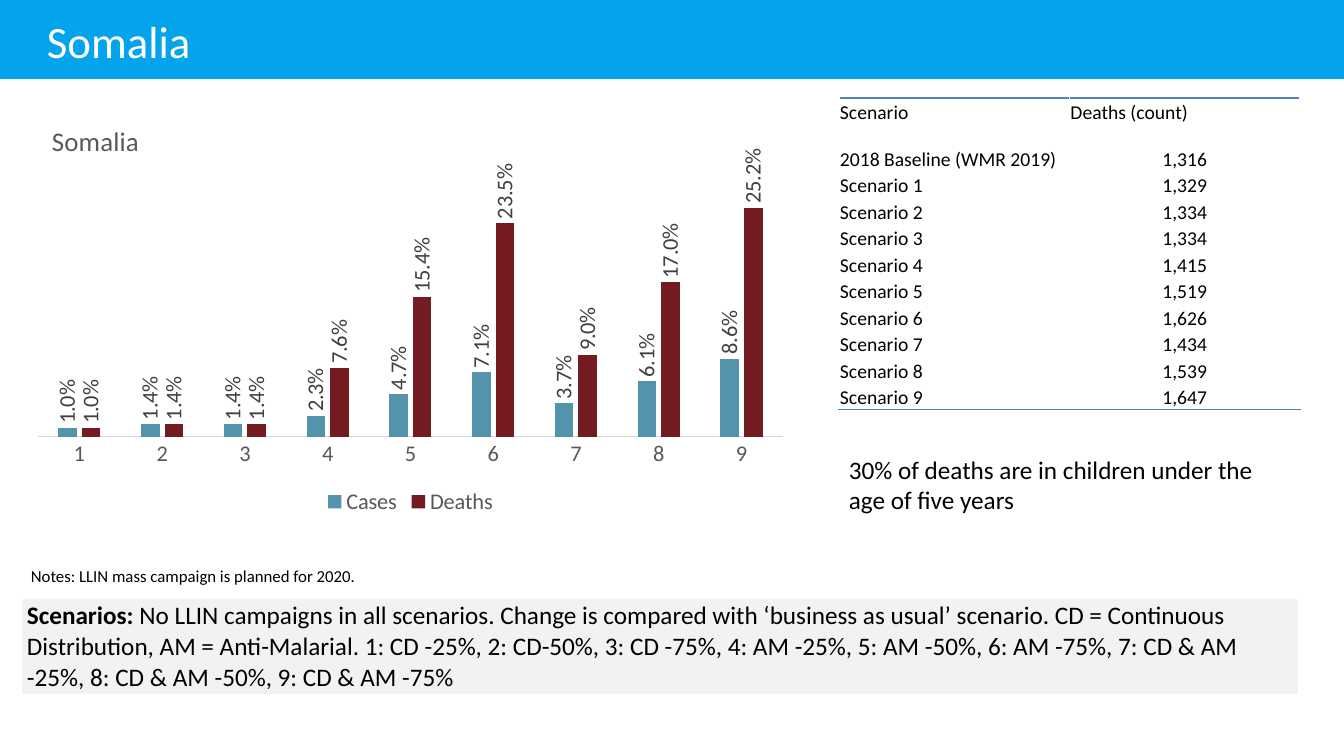
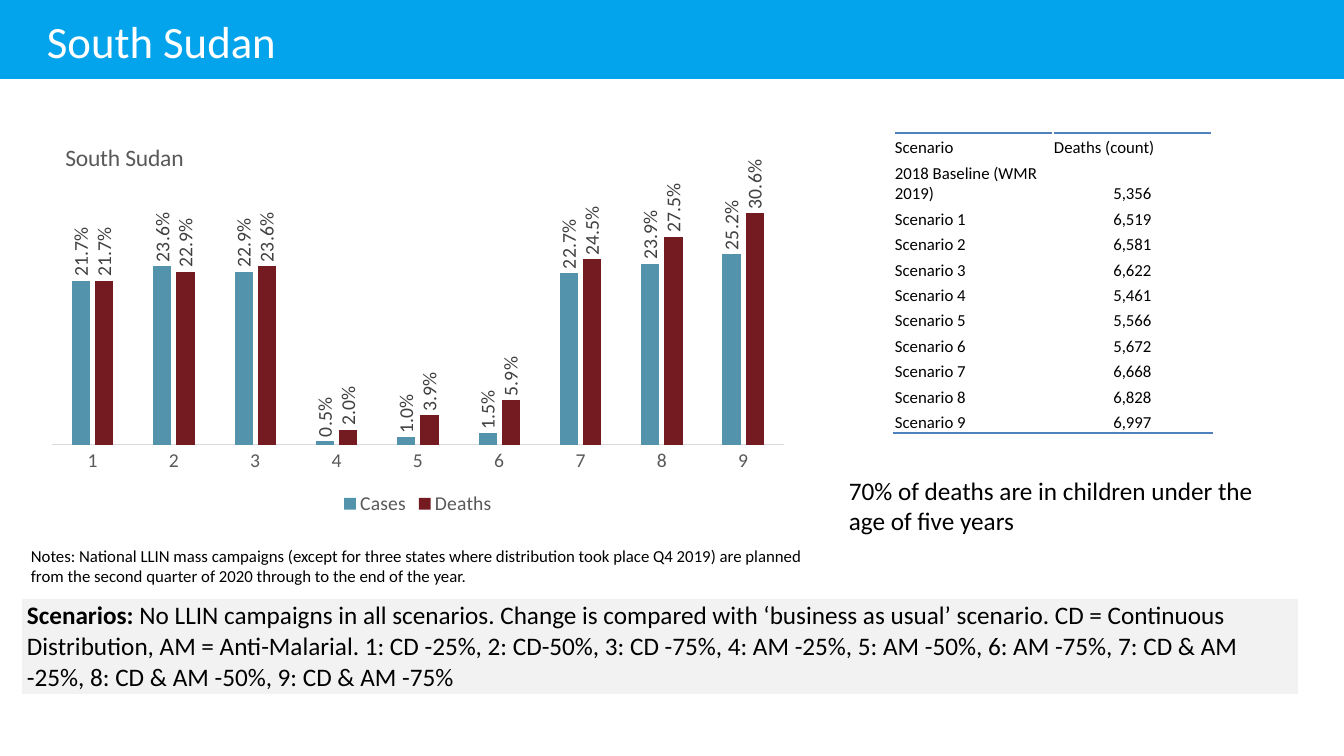
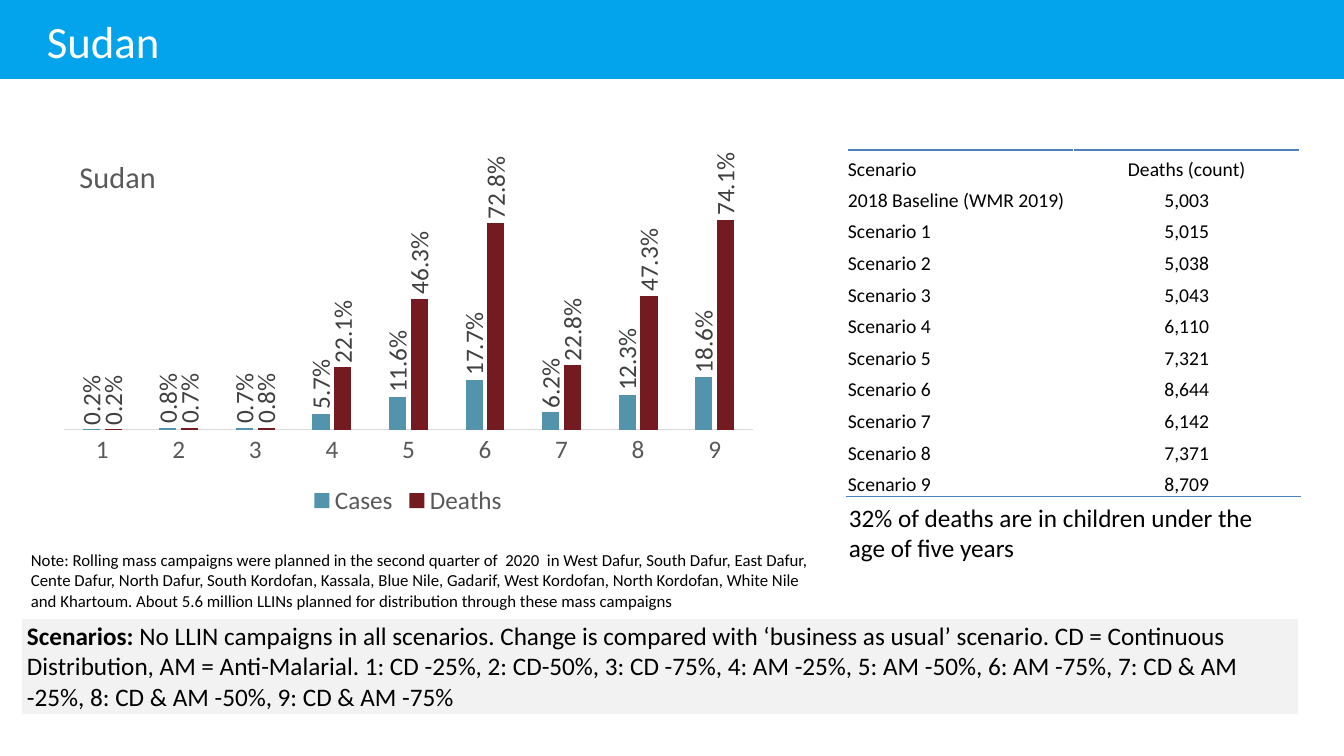
"""Build three country slides on malaria scenarios, each with a chart and a table."""
from pptx import Presentation
from pptx.chart.data import CategoryChartData
from pptx.dml.color import RGBColor
from pptx.enum.chart import XL_CHART_TYPE as ChartType
from pptx.enum.chart import XL_LABEL_POSITION as LabelPosition
from pptx.enum.chart import XL_LEGEND_POSITION as LegendPosition
from pptx.enum.chart import XL_TICK_MARK as TickMark
from pptx.enum.shapes import MSO_SHAPE as Shape
from pptx.enum.text import MSO_ANCHOR as Anchor
from pptx.enum.text import PP_ALIGN as Align
from pptx.oxml import parse_xml
from pptx.oxml.ns import nsdecls, qn
from pptx.util import Pt

PX = 914400 / 100.8
FONT = "Calibri"
BLACK, WHITE, BAND, PANEL = "000000", "FFFFFF", "04A4EC", "F2F2F2"
RULE, GREY, LABEL, AXIS = "4F81BD", "595959", "404040", "D9D9D9"
SERIES_COLORS = {"Cases": "5393AB", "Deaths": "741B22"}

SCENARIOS = (
    "No LLIN campaigns in all scenarios. Change is compared with ‘business as usual’ scenario. "
    "CD = Continuous Distribution, AM = Anti-Malarial. 1: CD -25%, 2: CD-50%, 3: CD -75%, "
    "4: AM -25%, 5: AM -50%, 6: AM -75%, 7: CD & AM -25%, 8: CD & AM -50%, 9: CD & AM -75%"
)
ROW_NAMES = ["2018 Baseline (WMR 2019)"] + [f"Scenario {number}" for number in range(1, 10)]

COUNTRIES = [
    dict(
        name="Somalia",
        note="Notes: LLIN mass campaign is planned for 2020.",
        note_box=(21, 561, 763, 30),
        share="30%", share_top=449, panel_top=598,
        table_box=(839, 98, 461, 312), baseline_height=47, table_size=14, header_align=Align.LEFT,
        counts="1,316 1,329 1,334 1,334 1,415 1,519 1,626 1,434 1,539 1,647",
        chart_box=(22, 92, 777, 428), chart_size=16, title_at=(47, 117),
        plot_box=(38, 164, 745, 273), top_value=0.3,
        Cases=[1.0, 1.4, 1.4, 2.3, 4.7, 7.1, 3.7, 6.1, 8.6],
        Deaths=[1.0, 1.4, 1.4, 7.6, 15.4, 23.5, 9.0, 17.0, 25.2],
    ),
    dict(
        name="South Sudan",
        note="Notes: National LLIN mass campaigns (except for three states where distribution took "
             "place Q4 2019) are planned from the second quarter of 2020 through to the end of the year.",
        note_box=(21, 541, 793, 50),
        share="70%", share_top=470, panel_top=598,
        table_box=(894, 133, 318, 300), baseline_height=46, table_size=12, header_align=Align.LEFT,
        counts="5,356 6,519 6,581 6,622 5,461 5,566 5,672 6,668 6,828 6,997",
        chart_box=(37, 115, 762, 405), chart_size=14, title_at=(61, 137),
        plot_box=(52, 180, 732, 265), top_value=0.35,
        Cases=[21.7, 23.6, 22.9, 0.5, 1.0, 1.5, 22.7, 23.9, 25.2],
        Deaths=[21.7, 22.9, 23.6, 2.0, 3.9, 5.9, 24.5, 27.5, 30.6],
    ),
    dict(
        name="Sudan",
        note="Note: Rolling mass campaigns were planned in the second quarter of  2020  in West Dafur, "
             "South Dafur, East Dafur, Cente Dafur, North Dafur, South Kordofan, Kassala, Blue Nile, "
             "Gadarif, West Kordofan, North Kordofan, White Nile and Khartoum. About 5.6 million LLINs "
             "planned for distribution through these mass campaigns",
        note_box=(21, 545, 809, 72),
        share="32%", share_top=497, panel_top=618,
        table_box=(847, 150, 453, 347), baseline_height=31, table_size=14, header_align=Align.CENTER,
        counts="5,003 5,015 5,038 5,043 6,110 7,321 8,644 6,142 7,371 8,709",
        chart_box=(49, 126, 718, 395), chart_size=18, title_at=(74, 150),
        plot_box=(64, 203, 689, 227), top_value=0.8,
        Cases=[0.2, 0.8, 0.7, 5.7, 11.6, 17.7, 6.2, 12.3, 18.6],
        Deaths=[0.2, 0.7, 0.8, 22.1, 46.3, 72.8, 22.8, 47.3, 74.1],
    ),
]


def px(*lengths):
    """Turn pixels into a list of EMU lengths."""
    return [round(length * PX) for length in lengths]


def style(font, size, color):
    """Set family, size and colour of a font."""
    font.name, font.size, font.bold = FONT, Pt(size), False
    font.color.rgb = RGBColor.from_string(color)


deck = Presentation()
deck.slide_width, deck.slide_height = px(1344, 756)

for country in COUNTRIES:
    page = deck.slides.add_slide(deck.slide_layouts[6])
    shapes = page.shapes

    band = shapes.add_shape(Shape.RECTANGLE, *px(0, 0, 1344, 79))
    band.shadow.inherit = False
    band.fill.solid()
    band.fill.fore_color.rgb = RGBColor.from_string(BAND)
    band.line.fill.background()

    share_text = f"{country['share']} of deaths are in children under the age of five years"
    for text, bounds, size, color, anchor in [
        (country["name"], (37, 5, 1210, 71), 32, WHITE, Anchor.MIDDLE),
        (country["note"], country["note_box"], 12, BLACK, Anchor.TOP),
        (share_text, (839, country["share_top"], 461, 72), 18, BLACK, Anchor.TOP),
    ]:
        frame = shapes.add_textbox(*px(*bounds)).text_frame
        frame.word_wrap = True
        frame.vertical_anchor = anchor
        frame.text = text
        style(frame.paragraphs[0].runs[0].font, size, color)

    panel = shapes.add_table(1, 1, *px(21, country["panel_top"], 1278, 97)).table
    panel.first_row = panel.horz_banding = False
    cell = panel.cell(0, 0)
    cell.fill.solid()
    cell.fill.fore_color.rgb = RGBColor.from_string(PANEL)
    cell.margin_left, cell.margin_right, cell.margin_top, cell.margin_bottom = px(6, 6, 3, 3)
    para = cell.text_frame.paragraphs[0]
    for text, bold in [("Scenarios: ", True), (SCENARIOS, False)]:
        span = para.add_run()
        span.text = text
        style(span.font, 18, BLACK)
        span.font.bold = bold

    rows = [("Scenario", "Deaths (count)"), *zip(ROW_NAMES, country["counts"].split())]
    table = shapes.add_table(len(rows), 2, *px(*country["table_box"])).table
    table.first_row = table.horz_banding = False
    baseline_height = country["baseline_height"]
    other_height = (country["table_box"][3] - baseline_height) / (len(rows) - 1)
    for row_index, row in enumerate(rows):
        table.rows[row_index].height = px(baseline_height if row_index == 1 else other_height)[0]
        for column_index, text in enumerate(row):
            cell = table.cell(row_index, column_index)
            cell.fill.background()
            cell.vertical_anchor = Anchor.BOTTOM
            cell.margin_left, cell.margin_right, cell.margin_top, cell.margin_bottom = px(1, 1, 1, 0)
            cell.text_frame.text = text
            para = cell.text_frame.paragraphs[0]
            if column_index == 1:
                para.alignment = Align.CENTER if row_index else country["header_align"]
            style(para.runs[0].font, country["table_size"], BLACK)
            if row_index in (0, len(rows) - 1):
                edge = "lnB" if row_index else "lnT"
                cell._tc.get_or_add_tcPr().insert(0, parse_xml(
                    f'<a:{edge} {nsdecls("a")} w="12700"><a:solidFill><a:srgbClr val="{RULE}"/>'
                    f'</a:solidFill><a:prstDash val="solid"/></a:{edge}>'))

    size = country["chart_size"]
    data = CategoryChartData(number_format="0.0%")
    data.categories = [str(number) for number in range(1, 10)]
    for name in SERIES_COLORS:
        data.add_series(name, [round(value / 100, 3) for value in country[name]])
    chart = shapes.add_chart(ChartType.COLUMN_CLUSTERED, *px(*country["chart_box"]), data).chart
    style(chart.font, size, BLACK)

    chart.has_title = True
    title = chart.chart_title
    title.text_frame.text = country["name"]
    style(title.text_frame.paragraphs[0].runs[0].font, size * 1.2, GREY)

    chart.has_legend = True
    chart.legend.position = LegendPosition.BOTTOM
    chart.legend.include_in_layout = False
    style(chart.legend.font, size, GREY)

    category_axis = chart.category_axis
    category_axis.major_tick_mark = category_axis.minor_tick_mark = TickMark.NONE
    category_axis.format.line.color.rgb = RGBColor.from_string(AXIS)
    category_axis.format.line.width = Pt(0.75)
    style(category_axis.tick_labels.font, size, GREY)
    value_axis = chart.value_axis
    value_axis.visible = value_axis.has_major_gridlines = False
    value_axis.minimum_scale, value_axis.maximum_scale = 0, country["top_value"]

    plot = chart.plots[0]
    plot.gap_width, plot.overlap, plot.vary_by_categories = 219, -27, False
    for series in plot.series:
        series.format.fill.solid()
        series.format.fill.fore_color.rgb = RGBColor.from_string(SERIES_COLORS[series.name])
        labels = series.data_labels
        labels.show_value = True
        labels.number_format, labels.number_format_is_linked = "0.0%", False
        labels.position = LabelPosition.OUTSIDE_END
        style(labels.font, size, LABEL)
        body = labels._element.find(qn("c:txPr")).find(qn("a:bodyPr"))
        body.set("rot", "-5400000")
        body.set("vert", "horz")

    left, top, width, height = country["chart_box"]
    plot_area = chart._chartSpace.chart.plotArea
    for parent, index, bounds, target in [
        (title._element, 1, country["title_at"], ""),
        (plot_area, 0, country["plot_box"], '<c:layoutTarget val="inner"/>'),
    ]:
        for old in parent.findall(qn("c:layout")):
            parent.remove(old)
        parts = [(bounds[0] - left) / width, (bounds[1] - top) / height]
        if len(bounds) == 4:
            parts += [bounds[2] / width, bounds[3] / height]
        modes = '<c:xMode val="edge"/><c:yMode val="edge"/>'
        values = "".join(f'<c:{key} val="{part:.4f}"/>' for key, part in zip("xywh", parts))
        parent.insert(index, parse_xml(
            f'<c:layout {nsdecls("c")}><c:manualLayout>{target}{modes}{values}'
            '</c:manualLayout></c:layout>'))

deck.save("out.pptx")
